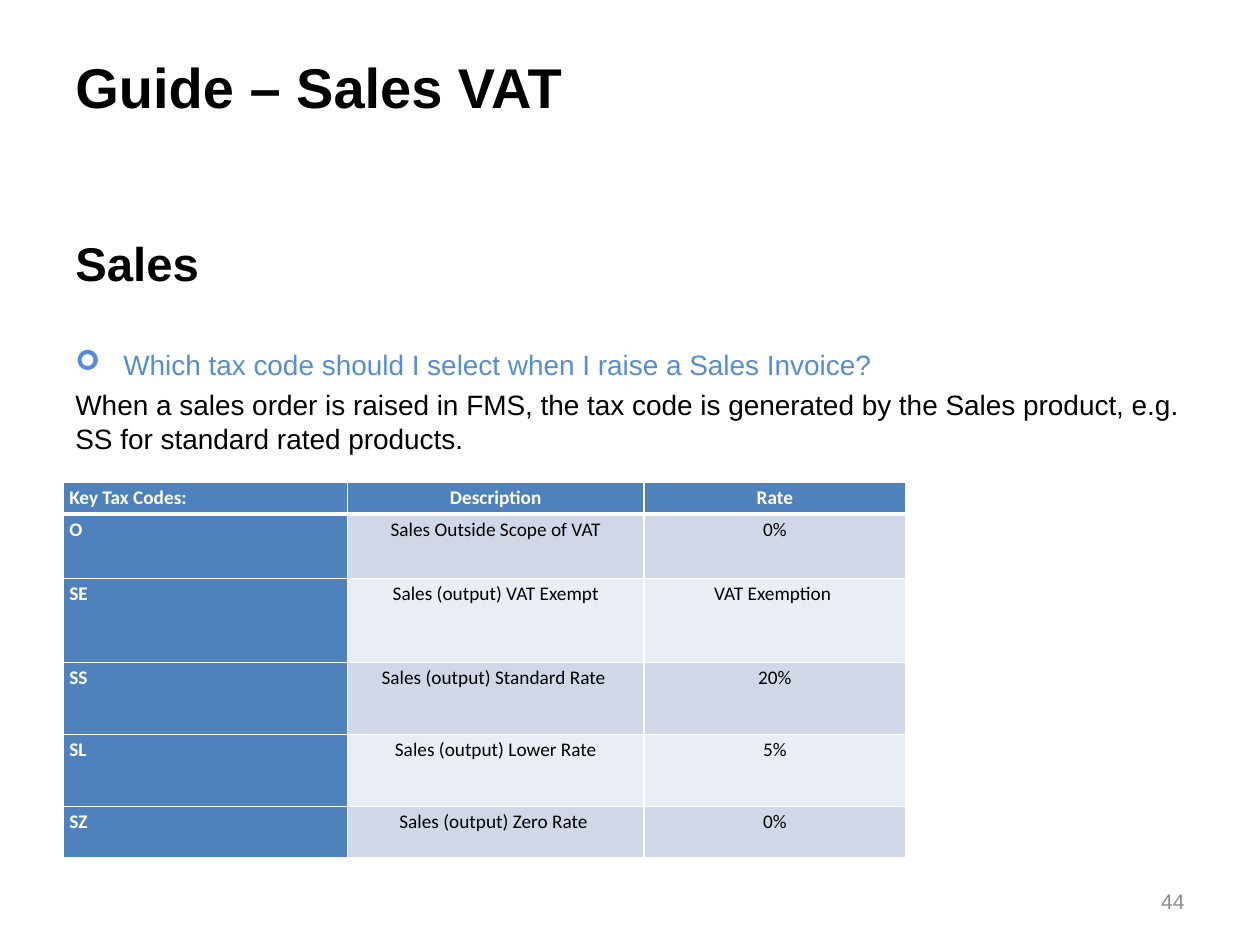
from lxml.etree import SubElement
from pptx import Presentation
from pptx.dml.color import RGBColor
from pptx.enum.text import MSO_ANCHOR, PP_ALIGN
from pptx.oxml import parse_xml
from pptx.oxml.ns import nsdecls, qn
from pptx.util import Inches, Pt

COLORS = {
    "black": "000000", "white": "FFFFFF", "gray": "8C8C8C", "question": "558ED5",
    "header": "4F81BD", "odd": "D0D8E8", "even": "E9EDF4",
}
TAX_CODES = [
    ("Key Tax Codes:", "Description", "Rate"),
    ("O", "Sales Outside Scope of VAT", "0%"),
    ("SE", "Sales (output) VAT Exempt", "VAT Exemption "),
    ("SS", "Sales (output) Standard Rate ", "20%"),
    ("SL", "Sales (output) Lower Rate", "5%"),
    ("SZ", "Sales (output) Zero Rate ", "0%"),
]
COLUMN_WIDTHS = [2.26, 2.35, 2.08]
ROW_HEIGHTS = [0.25, 0.51, 0.67, 0.57, 0.57, 0.41]


class SlideBuilder:
    """Hold the style and the current slide, and add each kind of element."""

    def __init__(self, page):
        self.page = page
        self.font = "Arial"
        self.table_font = "Calibri"

    def add_text(self, para, text, size, color, bold=False, font=None, **layout):
        for name, value in layout.items():
            setattr(para, name, value)
        span = para.add_run()
        span.text = text
        style = {"name": font or self.font, "size": Pt(size), "bold": bold}
        for name, value in style.items():
            setattr(span.font, name, value)
        span.font.color.rgb = RGBColor.from_string(COLORS[color])

    def text_box(self, left, top, width, height, anchor=MSO_ANCHOR.TOP, inset=0.05):
        box = self.page.shapes.add_textbox(
            Inches(left), Inches(top), Inches(width), Inches(height))
        frame = box.text_frame
        layout = {"word_wrap": True, "vertical_anchor": anchor, "margin_top": Inches(inset)}
        for name, value in layout.items():
            setattr(frame, name, value)
        return frame

    def bullet(self, para, symbol, indent):
        properties = para._p.get_or_add_pPr()
        properties.set("marL", str(Inches(indent)))
        properties.set("indent", str(-Inches(indent)))
        SubElement(properties, qn("a:buFont"), typeface="Wingdings")
        SubElement(properties, qn("a:buChar"), char=symbol)

    def borders(self, cell, widths):
        properties = cell._tc.get_or_add_tcPr()
        for position, (side, width) in enumerate(zip("LRTB", widths)):
            line = parse_xml(
                f'<a:ln{side} {nsdecls("a")} w="{Pt(width)}"><a:solidFill>'
                f'<a:srgbClr val="{COLORS["white"]}"/></a:solidFill></a:ln{side}>')
            properties.insert(position, line)

    def cell(self, cell, text, row, column):
        label = row == 0 or column == 0
        fill = "header" if label else ("odd" if row % 2 else "even")
        cell.fill.solid()
        cell.fill.fore_color.rgb = RGBColor.from_string(COLORS[fill])
        margins = {"margin_left": 0.05, "margin_right": 0.05,
                   "margin_top": 0, "margin_bottom": 0}
        for name, value in margins.items():
            setattr(cell, name, Inches(value))
        self.add_text(
            cell.text_frame.paragraphs[0], text, 11, "white" if label else "black",
            label, self.table_font, line_spacing=1.15, space_after=Pt(10),
            alignment=PP_ALIGN.CENTER if column else PP_ALIGN.LEFT)
        self.borders(cell, (1, 1, 3 if row == 1 else 1, 3 if row == 0 else 1))

    def table(self, left, top, widths, heights, rows):
        table = self.page.shapes.add_table(
            len(rows), len(widths), Inches(left), Inches(top),
            Inches(sum(widths)), Inches(sum(heights))).table
        for column, width in zip(table.columns, widths):
            column.width = Inches(width)
        for row, height in zip(table.rows, heights):
            row.height = Inches(height)
        for row, texts in enumerate(rows):
            for column, text in enumerate(texts):
                self.cell(table.cell(row, column), text, row, column)


def main():
    deck = Presentation()
    deck.slide_width, deck.slide_height = Inches(10), Inches(7.5)
    builder = SlideBuilder(deck.slides.add_slide(deck.slide_layouts[6]))

    body = builder.text_box(0.5, 1.78, 9.15, 5.04, inset=0.08)
    builder.add_text(body.paragraphs[0], "Sales", 27, "black", True)
    question = body.add_paragraph()
    builder.bullet(question, "➢", 0.38)
    builder.add_text(question, "Which tax code should I select when I raise a Sales Invoice?",
                     16, "question", space_before=Pt(32))
    builder.add_text(
        body.add_paragraph(),
        "When a sales order is raised in FMS, the tax code is generated by the "
        "Sales product, e.g. SS for standard rated products.",
        16, "black", space_before=Pt(4))

    number = builder.text_box(7.17, 6.95, 2.33, 0.4, MSO_ANCHOR.MIDDLE)
    builder.add_text(number.paragraphs[0], "44", 12, "gray", alignment=PP_ALIGN.RIGHT)
    title = builder.text_box(0.5, 0.13, 8.98, 0.87, MSO_ANCHOR.BOTTOM)
    builder.add_text(title.paragraphs[0], "Guide – Sales VAT", 32, "black", True,
                     alignment=PP_ALIGN.JUSTIFY)

    builder.table(0.5, 3.83, COLUMN_WIDTHS, ROW_HEIGHTS, TAX_CODES)
    deck.save("out.pptx")


if __name__ == "__main__":
    main()
